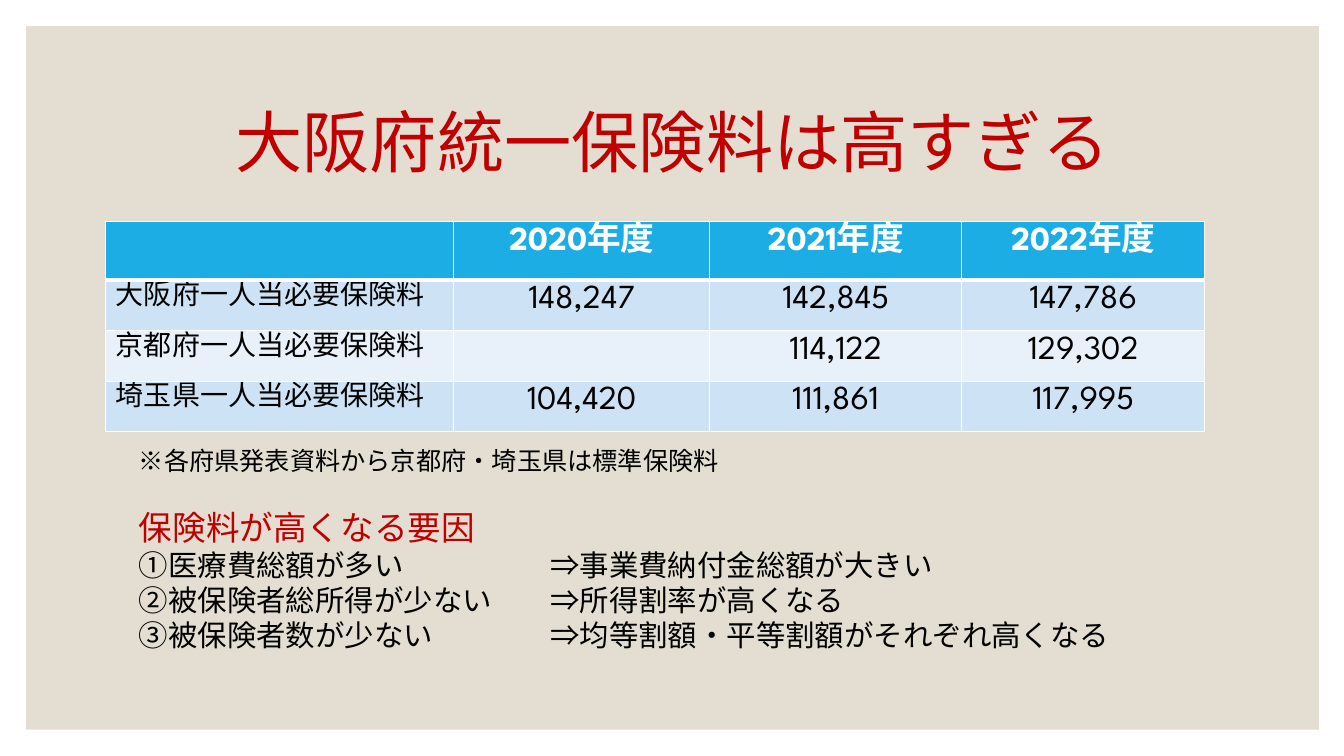
from dataclasses import dataclass

from lxml import etree
from pptx import Presentation
from pptx.dml.color import RGBColor
from pptx.enum import shapes, text
from pptx.oxml import ns
from pptx.util import Inches, Pt

COLORS = {
    "panel": "E3DED1", "red": "C00000", "black": "000000", "white": "FFFFFF",
    "header": "1CADE4", "band_dark": "CDE3F5", "band_light": "E8F1FA",
}
SPARTAN, NOTO = "League Spartan", "Noto Sans CJK JP"
ARROW_TAB = 4.08


@dataclass
class Line:
    words: str
    size: float
    font: str = NOTO
    color: str = "black"
    bold: bool = False
    align: text.PP_ALIGN = text.PP_ALIGN.LEFT
    gap_before: float = 0
    spacing: float = 1.0


def rgb(name: str) -> RGBColor:
    return RGBColor.from_string(COLORS[name])


def write_lines(frame, lines: list[Line]) -> None:
    for index, line in enumerate(lines):
        paragraph = frame.paragraphs[0] if index == 0 else frame.add_paragraph()
        paragraph.add_run().text = line.words
        paragraph.alignment = line.align
        paragraph.space_before = Pt(line.gap_before)
        paragraph.line_spacing = line.spacing
        font = paragraph.font
        font.size, font.bold, font.name = Pt(line.size), line.bold, line.font
        font.color.rgb = rgb(line.color)
        # East Asian typeface, and a tab stop where the line has two columns
        defaults = paragraph._p.pPr.find(ns.qn("a:defRPr"))
        etree.SubElement(defaults, ns.qn("a:ea"), typeface=line.font)
        if "\t" in line.words:
            tabs = etree.Element(ns.qn("a:tabLst"))
            etree.SubElement(tabs, ns.qn("a:tab"), pos=str(Inches(ARROW_TAB)), algn="l")
            defaults.addprevious(tabs)


def add_text(slide, left: float, top: float, width: float, height: float,
             lines: list[Line], anchor=text.MSO_ANCHOR.TOP) -> None:
    frame = slide.shapes.add_textbox(
        Inches(left), Inches(top), Inches(width), Inches(height)).text_frame
    frame.word_wrap = True
    frame.vertical_anchor = anchor
    write_lines(frame, lines)


def style_cell(cell, fill: str, bottom: float) -> None:
    cell.fill.solid()
    cell.fill.fore_color.rgb = rgb(fill)
    properties = cell._tc.get_or_add_tcPr()
    widths = {"lnL": 1, "lnR": 1, "lnT": 1, "lnB": bottom}
    for position, (side, width) in enumerate(widths.items()):
        border = etree.Element(ns.qn(f"a:{side}"), w=str(Pt(width)))
        solid = etree.SubElement(border, ns.qn("a:solidFill"))
        etree.SubElement(solid, ns.qn("a:srgbClr"), val=COLORS["white"])
        properties.insert(position, border)


def add_premium_table(slide, rows: list[list[str]]) -> None:
    column_widths = [3.45, 2.54, 2.5, 2.41]
    row_heights = [0.58, 0.5, 0.5, 0.5]
    table = slide.shapes.add_table(
        len(rows), len(column_widths), Inches(1.05), Inches(2.2),
        Inches(sum(column_widths)), Inches(sum(row_heights))).table
    for column, width in zip(table.columns, column_widths):
        column.width = Inches(width)
    for r, (values, height) in enumerate(zip(rows, row_heights)):
        table.rows[r].height = Inches(height)
        header = r == 0
        fill = "header" if header else ("band_light", "band_dark")[r % 2]
        for c, value in enumerate(values):
            cell = table.cell(r, c)
            style_cell(cell, fill, 3 if header or r == 0 else 1)
            if value:
                write_lines(cell.text_frame, [Line(
                    value, 24 if c else 20, SPARTAN,
                    "white" if header else "black", header,
                    text.PP_ALIGN.CENTER if c else text.PP_ALIGN.LEFT)])


def main() -> None:
    deck = Presentation()
    deck.slide_width, deck.slide_height = Inches(13.33), Inches(7.5)
    slide = deck.slides.add_slide(deck.slide_layouts[6])

    # Background panel
    panel = slide.shapes.add_shape(
        shapes.MSO_SHAPE.RECTANGLE, Inches(0.26), Inches(0.26), Inches(12.82), Inches(6.98))
    panel.shadow.inherit = False
    panel.fill.solid()
    panel.fill.fore_color.rgb = rgb("panel")
    panel.line.fill.background()

    # Title
    add_text(slide, 1.17, 0.7, 11, 1.5, [
        Line("大阪府統一保険料は高すぎる", 48, color="red",
             align=text.PP_ALIGN.CENTER, spacing=0.9)], text.MSO_ANCHOR.MIDDLE)

    # Premiums by prefecture and year
    add_premium_table(slide, [
        ["", "2020年度", "2021年度", "2022年度"],
        ["大阪府一人当必要保険料", "148,247", "142,845", "147,786"],
        ["京都府一人当必要保険料", "", "114,122", "129,302"],
        ["埼玉県一人当必要保険料", "104,420", "111,861", "117,995"],
    ])

    # Source note and causes
    causes = [
        "①医療費総額が多い\t⇒事業費納付金総額が大きい",
        "②被保険者総所得が少ない\t⇒所得割率が高くなる",
        "③被保険者数が少ない\t⇒均等割額・平等割額がそれぞれ高くなる",
    ]
    add_text(slide, 1.28, 4.37, 10.14, 2.47, [
        Line("※各府県発表資料から京都府・埼玉県は標準保険料", 18, SPARTAN),
        Line("保険料が高くなる要因", 24, color="red", gap_before=22),
        *(Line(cause, 21) for cause in causes),
    ])

    deck.save("out.pptx")


if __name__ == "__main__":
    main()
